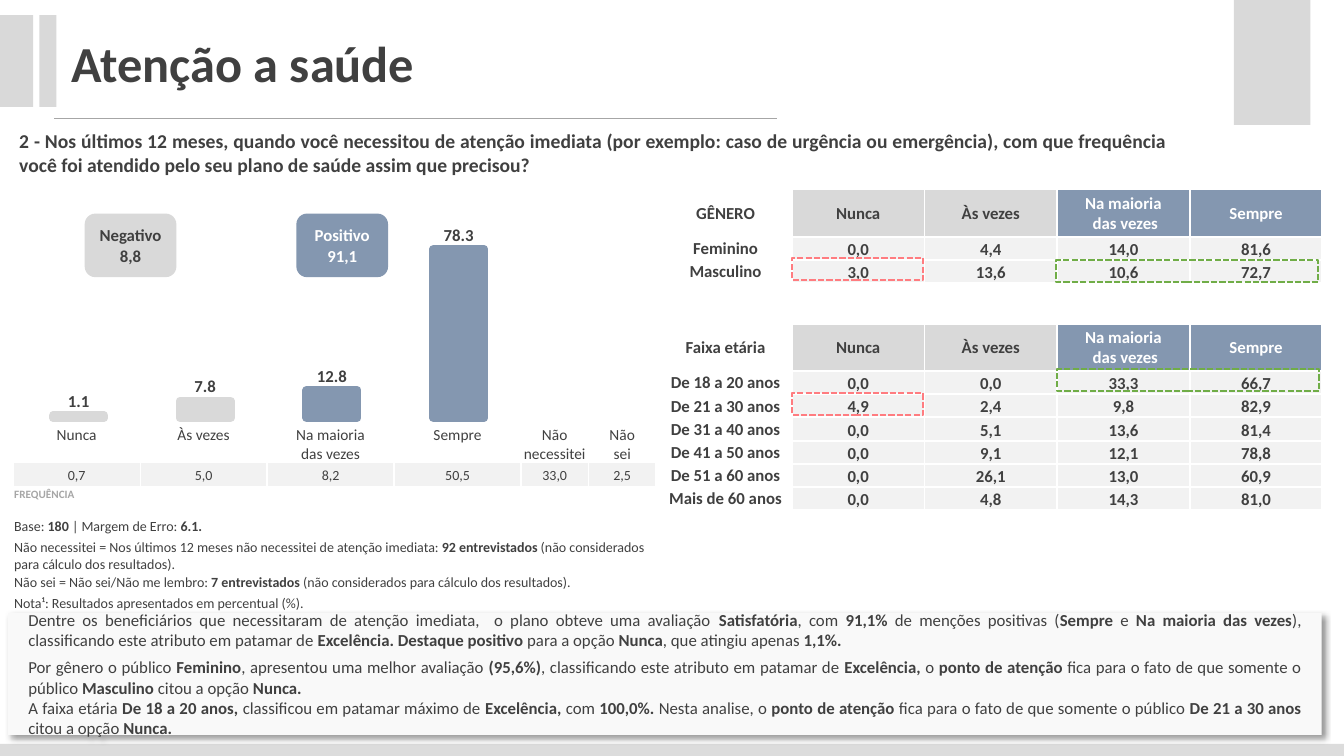
"""Build the health-care attention survey slide."""
from dataclasses import dataclass, replace
from typing import Any

from lxml import etree
from pptx import Presentation
from pptx import slide as sl
from pptx import util as u
from pptx.chart import data as cd
from pptx.dml import color as dc
from pptx.enum import chart as ce
from pptx.enum import dml, shapes, text
from pptx.oxml import ns

FONT = "Calibri"
DARK, WHITE, GRAY, BLUE, PALE = "404040", "FFFFFF", "D9D9D9", "8497B0", "F2F2F2"
MUTED, GREEN, RED = "A6A6A6", "70AD47", "FF7C80"
LEFT, CENTER, JUSTIFY = text.PP_ALIGN.LEFT, text.PP_ALIGN.CENTER, text.PP_ALIGN.JUSTIFY
TOP, MIDDLE, BOTTOM = text.MSO_ANCHOR.TOP, text.MSO_ANCHOR.MIDDLE, text.MSO_ANCHOR.BOTTOM
RECT, ROUNDED = shapes.MSO_SHAPE.RECTANGLE, shapes.MSO_SHAPE.ROUNDED_RECTANGLE
CELL_INSETS = (0.7, 0.7, 0.7, 0)


@dataclass(frozen=True)
class Style:
    """Hold the look of one text block; asterisks in its text toggle bold."""
    size: float
    color: str = DARK
    bold: bool = False
    align: Any = LEFT
    anchor: Any = TOP
    insets: tuple[float, ...] = (7.2, 3.6, 7.2, 3.6)
    gaps: tuple[float, ...] = ()


@dataclass(frozen=True)
class Block:
    """Describe one preset shape."""
    area: tuple[float, ...]
    fill: str = ""
    outline: str = ""
    kind: Any = RECT
    words: str = ""
    style: Style = Style(12)


@dataclass(frozen=True)
class Entry:
    """Describe one table cell."""
    words: str
    style: Style
    fill: str = ""


BOLD_CELL = Style(12, bold=True, align=CENTER, anchor=MIDDLE, insets=CELL_INSETS)
VALUE_CELL = replace(BOLD_CELL, anchor=BOTTOM)
LABEL_CELL = Style(11, align=CENTER, insets=CELL_INSETS)
COUNT_CELL = replace(LABEL_CELL, size=10, anchor=MIDDLE)
NOTE_CELL = Style(10, insets=CELL_INSETS)
BADGE = Style(12, bold=True, align=CENTER, anchor=MIDDLE)
ANALYSIS = Style(12, align=JUSTIFY, anchor=MIDDLE, insets=(14.4, 2.9, 14.4, 2.9), gaps=(0, 4.9, 0))

QUESTION = ("2 - Nos últimos 12 meses, quando você necessitou de atenção imediata (por exemplo: caso de "
            "urgência ou emergência), com que frequência você foi atendido pelo seu plano de saúde assim "
            "que precisou?")
CONCLUSION = (
    "Dentre os beneficiários que necessitaram de atenção imediata,  o plano obteve uma avaliação "
    "*Satisfatória*, com *91,1%* de menções positivas (*Sempre* e *Na maioria das vezes*), classificando "
    "este atributo em patamar de *Excelência. Destaque positivo *para a opção *Nunca*, que atingiu apenas "
    "*1,1%.*\n"
    "Por gênero o público* Feminino*, apresentou uma melhor avaliação *(95,6%)*, classificando este "
    "atributo em patamar de *Excelência, *o *ponto de atenção* fica para o fato de que somente o público "
    "*Masculino* citou a opção* Nunca.*\n"
    "A faixa etária* De 18 a 20 anos, *classificou em patamar máximo de *Excelência, *com *100,0%. *Nesta "
    "analise, o *ponto de atenção* fica para o fato de que somente o público *De 21 a 30 anos* citou a "
    "opção* Nunca.*")
NOTES = (
    "Base: *180 *| Margem de Erro: *6.1.*",
    "Não necessitei = Nos últimos 12 meses não necessitei de atenção imediata: *92 entrevistados* "
    "(não considerados para cálculo dos resultados).",
    "Não sei = Não sei/Não me lembro: *7 entrevistados* (não considerados para cálculo dos resultados).",
    "Nota¹: Resultados apresentados em percentual (%).")
GENDERS = {"Feminino": "0,0 4,4 14,0 81,6", "Masculino": "3,0 13,6 10,6 72,7"}
AGES = {"De 18 a 20 anos": "0,0 0,0 33,3 66,7", "De 21 a 30 anos": "4,9 2,4 9,8 82,9",
        "De 31 a 40 anos": "0,0 5,1 13,6 81,4", "De 41 a 50 anos": "0,0 9,1 12,1 78,8",
        "De 51 a 60 anos": "0,0 26,1 13,0 60,9", "Mais de 60 anos": "0,0 4,8 14,3 81,0"}
FREQUENCIES = {"Nunca": "0,7", "Às vezes": "5,0", "Na maioria\ndas vezes": "8,2", "Sempre": "50,5",
               "Não necessitei": "33,0", "Não\nsei": "2,5"}

BACKDROP = (
    Block((0, 531.4, 960, 8.6), "DCDCDC"),
    Block((-0.7, 10.8, 24.5, 65.5), GRAY),
    Block((28.1, 10.8, 12.2, 65.5), GRAY),
    Block((881.3, 0, 54.7, 89.3), GRAY))
MARKS = (
    Block((754.6, 185.8, 187.2, 15.8), outline=GREEN),
    Block((755.3, 263.5, 187.2, 15.8), outline=GREEN),
    Block((565.9, 184.3, 93.6, 15.8), outline=RED),
    Block((565.9, 280.8, 93.6, 15.8), outline=RED),
    Block((60.5, 152.6, 65.5, 45.4), GRAY, "", ROUNDED, "Negativo 8,8", BADGE),
    Block((211.7, 152.6, 65.5, 45.4), BLUE, "", ROUNDED, "Positivo 91,1", replace(BADGE, color=WHITE)))


def rgb(value: str) -> dc.RGBColor:
    """Turn a hex string into a colour."""
    return dc.RGBColor.from_string(value)


def apply(target: Any, values: dict[str, Any]) -> None:
    """Set every attribute in a dict of format values."""
    for name, value in values.items():
        setattr(target, name, value)


def paint(fill: Any, value: str) -> None:
    """Fill with a colour, or clear the fill when none is given."""
    if value:
        fill.solid()
        fill.fore_color.rgb = rgb(value)
    else:
        fill.background()


def style_font(font: Any, style: Style, bold: bool) -> None:
    """Apply a text style to a font."""
    apply(font, {"name": FONT, "size": u.Pt(style.size), "bold": bold})
    font.color.rgb = rgb(style.color)


def write(holder: Any, frame: Any, words: str, style: Style) -> None:
    """Write paragraphs into a frame whose margins belong to the holder."""
    sides = ("margin_left", "margin_top", "margin_right", "margin_bottom")
    apply(holder, {side: u.Pt(inset) for side, inset in zip(sides, style.insets)})
    apply(holder, {"vertical_anchor": style.anchor, "word_wrap": True} if holder is frame
          else {"vertical_anchor": style.anchor})
    for index, line in enumerate(words.split("\n")):
        para = frame.add_paragraph() if index else frame.paragraphs[0]
        para.alignment = style.align
        if index and style.gaps:
            para.space_before = u.Pt(style.gaps[index])
        for turn, piece in enumerate(line.split("*")):
            for part, wording in enumerate(piece.split("\v")):
                if part:
                    para.add_line_break()
                if wording:
                    span = para.add_run()
                    span.text = wording
                    style_font(span.font, style, style.bold or turn % 2 == 1)


def add_block(page: sl.Slide, block: Block) -> Any:
    """Draw a preset shape."""
    box = page.shapes.add_shape(block.kind, *map(u.Pt, block.area))
    box.shadow.inherit = False
    paint(box.fill, block.fill)
    paint(box.line.fill, block.outline)
    if block.outline:
        apply(box.line, {"width": u.Pt(1.5), "dash_style": dml.MSO_LINE.SQUARE_DOT})
    if block.words:
        write(box.text_frame, box.text_frame, block.words, block.style)
    return box


def add_text(page: sl.Slide, area: tuple[float, ...], words: str, style: Style) -> None:
    """Draw a text box."""
    frame = page.shapes.add_textbox(*map(u.Pt, area)).text_frame
    write(frame, frame, words, style)


def add_grid(page: sl.Slide, corner: tuple[float, float], widths: list[float], heights: list[float],
             rows: list[list[Entry]], border: float = 0) -> None:
    """Draw a table, merging rows that have fewer entries than columns."""
    size = (sum(widths), sum(heights))
    table = page.shapes.add_table(len(heights), len(widths), *map(u.Pt, corner + size)).table
    apply(table, {"first_row": False, "horz_banding": False})
    for column, width in zip(table.columns, widths):
        column.width = u.Pt(width)
    for number, (height, entries) in enumerate(zip(heights, rows)):
        table.rows[number].height = u.Pt(height)
        if len(entries) < len(widths):
            table.cell(number, 0).merge(table.cell(number, len(widths) - 1))
        for index in range(len(widths)):
            cell = table.cell(number, index)
            paint(cell.fill, entries[index].fill if index < len(entries) else "")
            for place, side in enumerate("LRTB"):
                edge = etree.Element(ns.qn(f"a:ln{side}"), w=str(u.Pt(border)))
                fill = etree.SubElement(edge, ns.qn("a:solidFill" if border else "a:noFill"))
                if border:
                    etree.SubElement(fill, ns.qn("a:srgbClr"), val=WHITE)
                cell._tc.get_or_add_tcPr().insert(place, edge)
            if index < len(entries):
                write(cell, cell.text_frame, entries[index].words, entries[index].style)


def group_rows(title: str, groups: dict[str, str]) -> list[list[Entry]]:
    """List the header and value rows of one audience split."""
    light = replace(BOLD_CELL, color=WHITE)
    header = [Entry(title, BOLD_CELL), Entry("Nunca", BOLD_CELL, GRAY), Entry("Às vezes", BOLD_CELL, GRAY),
              Entry("Na maioria\v das vezes", light, BLUE), Entry("Sempre", light, BLUE)]
    return [header] + [[Entry(name, BOLD_CELL)] + [Entry(value, VALUE_CELL, PALE) for value in values.split()]
                       for name, values in groups.items()]


def add_answers(page: sl.Slide) -> None:
    """Draw the column chart of answers."""
    data = cd.CategoryChartData(number_format="0.0")
    data.categories = ["1", "2", "3", "4"]
    data.add_series("Series 1", (78.3, 12.8, 7.8, 1.1))
    area = map(u.Pt, (-0.7, 142.8, 385.2, 192.2))
    chart = page.shapes.add_chart(ce.XL_CHART_TYPE.COLUMN_CLUSTERED, *area, data).chart
    apply(chart, {"has_legend": False, "has_title": False})
    apply(chart.font, {"name": FONT, "size": u.Pt(10)})
    apply(chart.category_axis, {"visible": False, "reverse_order": True})
    apply(chart.value_axis, {"visible": False, "has_major_gridlines": False,
                             "minimum_scale": 0, "maximum_scale": 90})
    plot = chart.plots[0]
    apply(plot, {"gap_width": 150, "overlap": -25, "vary_by_categories": False, "has_data_labels": True})
    apply(plot.data_labels, {"show_value": True, "number_format": "0.0", "number_format_is_linked": False,
                             "position": ce.XL_LABEL_POSITION.OUTSIDE_END})
    style_font(plot.data_labels.font, Style(12), True)
    for index, color in enumerate((BLUE, BLUE, GRAY, GRAY)):
        look = plot.series[0].points[index].format
        paint(look.fill, color)
        paint(look.line.fill, color)
        look.line.width = u.Pt(6)
    for outline in chart._chartSpace.iter(ns.qn("a:ln")):
        etree.SubElement(outline, ns.qn("a:round"))
    region = chart._chartSpace.find(".//" + ns.qn("c:plotArea"))
    for layout in region.findall(ns.qn("c:layout")):
        region.remove(layout)
    layout = etree.Element(ns.qn("c:layout"))
    region.insert(0, layout)
    manual = etree.SubElement(layout, ns.qn("c:manualLayout"))
    for name, value in {"layoutTarget": "inner", "xMode": "edge", "yMode": "edge", "x": "0.03",
                        "y": "0.09", "w": "0.94", "h": "0.72"}.items():
        etree.SubElement(manual, ns.qn(f"c:{name}"), val=value)


def add_conclusion(page: sl.Slide) -> None:
    """Draw the shaded analysis box."""
    box = add_block(page, Block((5.8, 437.8, 938.2, 87.1), "F9F9F9", words=CONCLUSION, style=ANALYSIS))
    effects = box._element.spPr.find(ns.qn("a:effectLst"))
    shadow = etree.SubElement(effects, ns.qn("a:outerShdw"), blurRad=str(u.Pt(4)), dist=str(u.Pt(3)),
                              dir="2700000", algn="tl", rotWithShape="0")
    tint = etree.SubElement(shadow, ns.qn("a:srgbClr"), val="000000")
    etree.SubElement(tint, ns.qn("a:alpha"), val="40000")


def main() -> None:
    """Assemble and save the slide."""
    deck = Presentation()
    apply(deck, {"slide_width": u.Pt(960), "slide_height": u.Pt(540)})
    page = deck.slides.add_slide(deck.slide_layouts[6])
    for block in BACKDROP:
        add_block(page, block)
    rule = page.shapes.add_connector(shapes.MSO_CONNECTOR.STRAIGHT, *map(u.Pt, (38.9, 84.2, 555.1, 84.2)))
    paint(rule.line.fill, MUTED)
    rule.line.width = u.Pt(0.5)
    etree.SubElement(rule._element.spPr, ns.qn("a:effectLst"))
    add_answers(page)
    add_text(page, (5.8, 87.8, 835.9, 41.8), QUESTION,
             Style(14, bold=True, align=JUSTIFY, insets=(7.9, 4.3, 7.9, 4.3)))
    add_grid(page, (470.9, 135.4), [94.75] * 5, [33.8, 16.6, 16.6, 28.1, 33.8] + [16.6] * 6,
             group_rows("GÊNERO", GENDERS) + [[]] + group_rows("Faixa etária", AGES), 1.5)
    add_grid(page, (9.4, 303.1), [90.7] * 4 + [48.2] * 2, [27.4, 17.3, 17.3],
             [[Entry(name, LABEL_CELL) for name in FREQUENCIES],
              [Entry(value, COUNT_CELL, PALE) for value in FREQUENCIES.values()],
              [Entry("FREQUÊNCIA", Style(8, MUTED, True, insets=CELL_INSETS))]], 1)
    add_grid(page, (9.4, 369.4), [470.9], [15.1] * 4, [[Entry(note, NOTE_CELL)] for note in NOTES])
    add_conclusion(page)
    add_text(page, (43.9, 19.4, 265.7, 51.1), "Atenção a saúde", Style(36, bold=True))
    for block in MARKS:
        add_block(page, block)
    deck.save("out.pptx")


if __name__ == "__main__":
    main()
